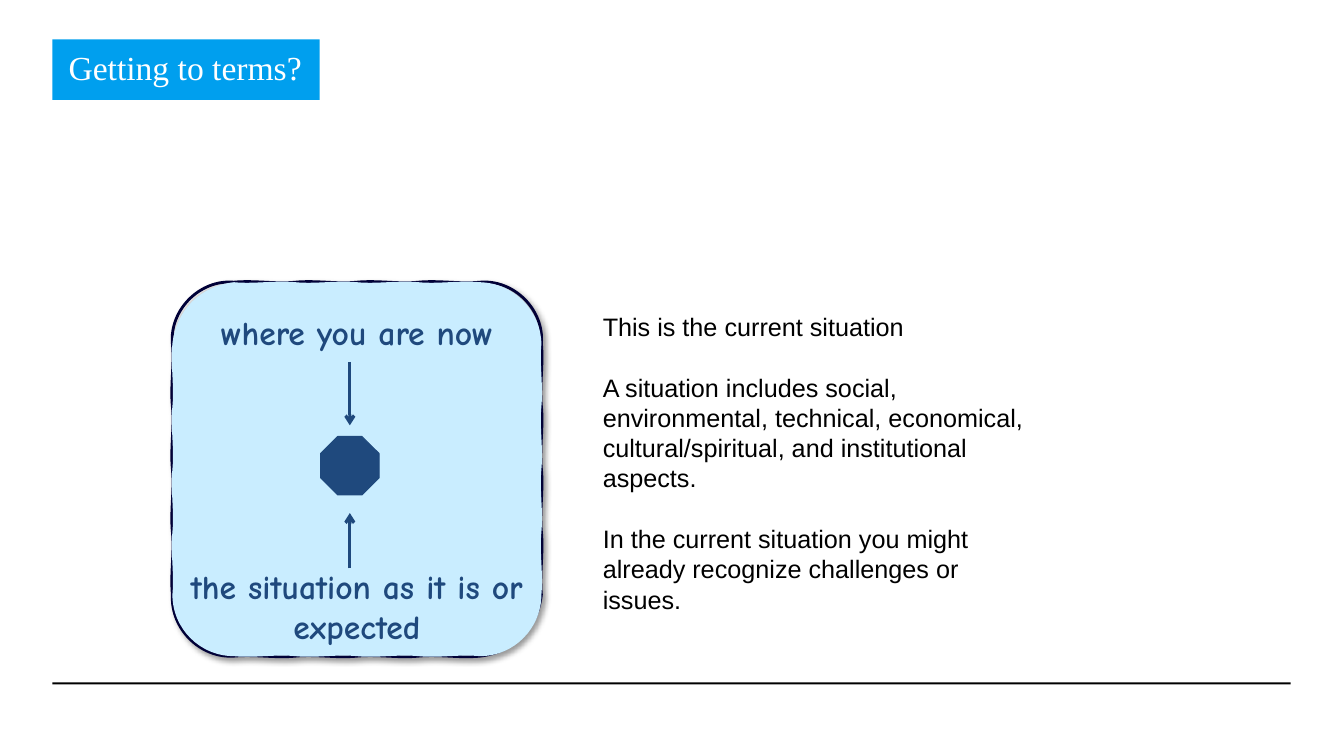
from dataclasses import dataclass

from lxml import etree
from pptx import Presentation
from pptx.dml.color import RGBColor
from pptx.enum.shapes import MSO_CONNECTOR, MSO_SHAPE
from pptx.enum.text import MSO_ANCHOR, MSO_AUTO_SIZE, PP_ALIGN
from pptx.oxml import parse_xml
from pptx.oxml.ns import qn
from pptx.shapes.autoshape import Shape
from pptx.slide import Slide
from pptx.text.text import TextFrame
from pptx.util import Inches, Pt

STRAIGHT = MSO_CONNECTOR.STRAIGHT
RECTANGLE, OCTAGON = MSO_SHAPE.RECTANGLE, MSO_SHAPE.OCTAGON
TOP = MSO_ANCHOR.TOP
GROW, FIXED = MSO_AUTO_SIZE.SHAPE_TO_FIT_TEXT, MSO_AUTO_SIZE.NONE
LEFT, CENTER = PP_ALIGN.LEFT, PP_ALIGN.CENTER
TITLE_ONLY = 5


@dataclass(frozen=True)
class Theme:
    white: RGBColor = RGBColor(0xFF, 0xFF, 0xFF)
    black: RGBColor = RGBColor(0, 0, 0)
    title_fill: RGBColor = RGBColor(0x00, 0x9F, 0xEE)
    card_fill: RGBColor = RGBColor(0xC9, 0xED, 0xFF)
    card_line: RGBColor = RGBColor(0x00, 0x00, 0x37)
    navy: RGBColor = RGBColor(0x1F, 0x49, 0x7D)
    heading_size: Pt = Pt(24)
    body_size: Pt = Pt(18)
    paragraph_gap: Pt = Pt(21.7)


@dataclass(frozen=True)
class Box:
    left: float
    top: float
    width: float
    height: float

    def lengths(self) -> tuple[Inches, ...]:
        return tuple(map(Inches, (self.left, self.top, self.width, self.height)))


@dataclass(frozen=True)
class TextStyle:
    font: dict
    color: RGBColor
    alignment: PP_ALIGN


@dataclass(frozen=True)
class TextBlock:
    box: Box
    style: TextStyle
    paragraphs: tuple[str, ...]


@dataclass(frozen=True)
class Arrow:
    start_y: float
    end_y: float


@dataclass(frozen=True)
class SketchOutline:
    """How far, in inches, the sides wave and each corner bulges outwards."""
    wave: float
    corner_bulges: tuple[float, float, float, float]


THEME = Theme()
TITLE_STYLE = TextStyle({"name": "Times New Roman", "size": THEME.heading_size},
                        THEME.white, LEFT)
LABEL_STYLE = TextStyle({"name": "Comic Neue", "size": THEME.heading_size, "bold": True},
                        THEME.navy, CENTER)
BODY_STYLE = TextStyle({"name": "Arial", "size": THEME.body_size}, THEME.black, LEFT)

TITLE_BOX = Box(0.52, 0.39, 2.65, 0.6)
FOOTER_RULE = Box(0.52, 6.77, 12.28, 0.02)
CARD = Box(1.71, 2.8, 3.66, 3.71)
SITUATION = Box(3.18, 4.33, 0.58, 0.58)

TEXT_BLOCKS = (
    TextBlock(Box(CARD.left, 5.56, CARD.width, 0.91), LABEL_STYLE,
              ("the situation as it is or expected",)),
    TextBlock(Box(CARD.left, 3.05, CARD.width, 0.5), LABEL_STYLE,
              ("where you are now",)),
    TextBlock(Box(5.88, 3.04, 4.49, 3.13), BODY_STYLE, (
        "This is the current situation",
        "A situation includes social, environmental, technical, economical, "
        "cultural/spiritual, and institutional aspects.",
        "In the current situation you might already recognize challenges or issues.",
    )),
)
ARROWS = (Arrow(3.59, 4.22), Arrow(5.64, 5.09))

CORNER_RADIUS = 0.61
CORNER_PULL = 0.55  # share of the radius that makes a curve nearly circular
CURVES_PER_SIDE = 4
STROKE_OUTLINE = SketchOutline(0.02, (0.03, 0.03, -0.04, 0.02))
FILL_OUTLINE = SketchOutline(-0.02, (-0.04, -0.01, 0, 0))
UNITS_PER_INCH = 1000


def write_text(frame: TextFrame, block: TextBlock) -> None:
    for index, text in enumerate(block.paragraphs):
        paragraph = frame.paragraphs[0] if index == 0 else frame.add_paragraph()
        paragraph.text = text
        paragraph.alignment = block.style.alignment
        paragraph.space_before = THEME.paragraph_gap if index else Pt(0)
        for name, value in block.style.font.items():
            setattr(paragraph.font, name, value)
        paragraph.font.color.rgb = block.style.color


def add_title(slide: Slide) -> None:
    title = slide.shapes.title
    title.left, title.top, title.width, title.height = TITLE_BOX.lengths()
    title.fill.solid()
    title.fill.fore_color.rgb = THEME.title_fill
    frame_format = {"margin_left": Inches(0.16), "margin_right": Inches(0.16),
                    "margin_top": Inches(0.08), "margin_bottom": Inches(0.12),
                    "vertical_anchor": TOP, "word_wrap": False, "auto_size": FIXED}
    for name, value in frame_format.items():
        setattr(title.text_frame, name, value)
    write_text(title.text_frame, TextBlock(TITLE_BOX, TITLE_STYLE, ("Getting to terms?",)))


def add_text(slide: Slide, block: TextBlock) -> None:
    frame = slide.shapes.add_textbox(*block.box.lengths()).text_frame
    frame.word_wrap = True
    frame.auto_size = GROW
    write_text(frame, block)


def add_solid(slide: Slide, kind: MSO_SHAPE, box: Box, color: RGBColor) -> Shape:
    shape = slide.shapes.add_shape(kind, *box.lengths())
    shape.shadow.inherit = False
    shape.fill.solid()
    shape.fill.fore_color.rgb = color
    shape.line.fill.background()
    return shape


def sketch_points(box: Box, outline: SketchOutline) -> list[tuple[float, float]]:
    """Go clockwise from the top left corner: a start, then two controls and an end
    per curve. A complex number is a point, and times -1j turns a heading outwards."""
    right, bottom = box.left + box.width, box.top + box.height
    corners = [complex(x, y) for x, y in ((box.left, box.top), (right, box.top),
                                          (right, bottom), (box.left, bottom))]
    headings = (1, 1j, -1, -1j)
    points = [corners[0] - CORNER_RADIUS * headings[-1]]
    for index, (corner, heading) in enumerate(zip(corners, headings)):
        arriving, bulge = headings[index - 1], outline.corner_bulges[index]
        handle = CORNER_RADIUS * (1 - CORNER_PULL)
        side_start = corner + CORNER_RADIUS * heading
        points += [corner - handle * arriving - 1j * arriving * bulge,
                   corner + handle * heading - 1j * heading * bulge, side_start]
        side_end = corners[(index + 1) % len(corners)] - CORNER_RADIUS * heading
        step = (side_end - side_start) / CURVES_PER_SIDE
        wave = -1j * heading * outline.wave
        for curve in range(CURVES_PER_SIDE):
            begin = side_start + curve * step
            points += [begin + step / 3 + wave, begin + step * 2 / 3 - wave, begin + step]
    return [(point.real * UNITS_PER_INCH, point.imag * UNITS_PER_INCH) for point in points]


def curve_outlines(card: Shape) -> None:
    """Turn each three segments into a curve, and part the stroke from the fill."""
    stroke = card._element.find(".//" + qn("a:path"))
    segments = stroke.findall(qn("a:lnTo"))
    for first in range(0, len(segments), 3):
        curve = etree.Element(qn("a:cubicBezTo"))
        segments[first].addprevious(curve)
        for segment in segments[first:first + 3]:
            curve.append(segment[0])
            stroke.remove(segment)
    fill = etree.Element(qn("a:path"), w=stroke.get("w"), h=stroke.get("h"), stroke="0")
    stroke.set("fill", "none")
    stroke.addnext(fill)
    fill.extend(list(stroke)[len(stroke) // 2:])


def add_card(slide: Slide) -> None:
    builder = slide.shapes.build_freeform(scale=Inches(1) / UNITS_PER_INCH)
    for outline in (STROKE_OUTLINE, FILL_OUTLINE):
        start, *curve_points = sketch_points(CARD, outline)
        if outline is STROKE_OUTLINE:
            builder = slide.shapes.build_freeform(*start, scale=Inches(1) / UNITS_PER_INCH)
        else:
            builder.move_to(*start)
        builder.add_line_segments(curve_points, close=True)
    card = builder.convert_to_shape()
    curve_outlines(card)
    card.fill.solid()
    card.fill.fore_color.rgb = THEME.card_fill
    card.line.color.rgb = THEME.card_line
    card.line.width = Pt(2)
    card.shadow.inherit = False
    card._element.spPr.find(qn("a:effectLst")).append(parse_xml(
        '<a:outerShdw xmlns:a="http://schemas.openxmlformats.org/drawingml/2006/main" '
        f'blurRad="{Pt(4)}" dist="{Pt(3)}" dir="2700000" algn="tl" rotWithShape="0">'
        '<a:srgbClr val="000000"><a:alpha val="40000"/></a:srgbClr></a:outerShdw>'))


def add_situation(slide: Slide) -> None:
    octagon = add_solid(slide, OCTAGON, SITUATION, THEME.navy)
    octagon.line.color.rgb = THEME.navy
    octagon.line.width = Pt(0.75)


def add_arrow(slide: Slide, arrow: Arrow) -> None:
    center = Inches(SITUATION.left + SITUATION.width / 2)
    connector = slide.shapes.add_connector(STRAIGHT, center, Inches(arrow.start_y),
                                           center, Inches(arrow.end_y))
    connector.line.color.rgb = THEME.navy
    connector.line.width = Pt(2.25)
    etree.SubElement(connector.line._get_or_add_ln(), qn("a:tailEnd"), type="arrow")
    etree.SubElement(connector._element.spPr, qn("a:effectLst"))


def main() -> None:
    presentation = Presentation()
    presentation.slide_width, presentation.slide_height = Inches(13.33), Inches(7.5)
    slide = presentation.slides.add_slide(presentation.slide_layouts[TITLE_ONLY])
    add_title(slide)
    add_solid(slide, RECTANGLE, FOOTER_RULE, THEME.black)
    add_card(slide)
    add_situation(slide)
    for arrow in ARROWS:
        add_arrow(slide, arrow)
    for block in TEXT_BLOCKS:
        add_text(slide, block)
    presentation.save("out.pptx")


if __name__ == "__main__":
    main()
